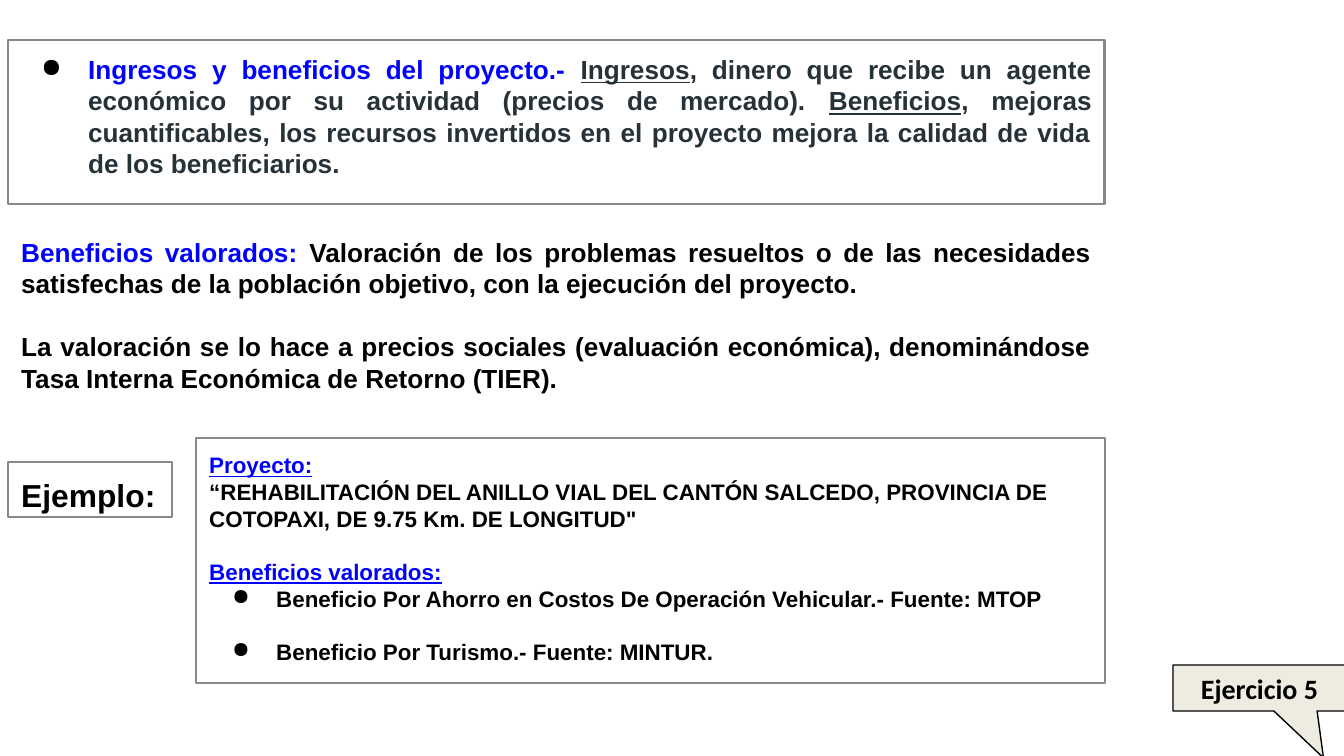
import pptx
import pptx.dml.color
import pptx.enum.shapes
import pptx.enum.text
import pptx.oxml
import pptx.oxml.ns
import pptx.util

PX = 914400 / 134.4
BLUE, BLACK, SLATE, GREY, WHITE = "0000FF", "000000", "263238", "888888", "FFFFFF"
SHAPE = pptx.enum.shapes.MSO_SHAPE
ALIGN = pptx.enum.text.PP_ALIGN
ANCHOR = pptx.enum.text.MSO_ANCHOR


def px(n):
    return pptx.util.Emu(round(n * PX))


def rgb(value):
    return pptx.dml.color.RGBColor.from_string(value)


def add_run(p, text, size=14, color=BLACK, font="Arial", underline=False):
    r = p.add_run()
    r.text = text
    r.font.size = pptx.util.Pt(size)
    r.font.name = font
    r.font.bold = True
    r.font.underline = underline
    r.font.color.rgb = rgb(color)


class SlideBuilder:
    """Holds the presentation style and the slide being drawn."""

    def __init__(self, width, height):
        self.prs = pptx.Presentation()
        self.prs.slide_width, self.prs.slide_height = px(width), px(height)
        self.s = self.prs.slides.add_slide(self.prs.slide_layouts[6])

    def box(self, x, y, w, h, fill=WHITE, line=GREY, weight=0.75,
            shape=SHAPE.RECTANGLE, anchor=ANCHOR.TOP):
        sp = self.s.shapes.add_shape(shape, px(x), px(y), px(w), px(h))
        sp.shadow.inherit = False
        sp.fill.solid()
        sp.fill.fore_color.rgb = rgb(fill)
        sp.line.color.rgb = rgb(line)
        sp.line.width = pptx.util.Pt(weight)
        tf = sp.text_frame
        tf.word_wrap = True
        tf.vertical_anchor = anchor
        tf.margin_left = tf.margin_right = tf.margin_top = tf.margin_bottom = pptx.util.Inches(0.1)
        return sp

    def paragraph(self, sp, *runs, align=ALIGN.LEFT, before=0, hang=0, **style):
        tf = sp.text_frame
        p = tf.add_paragraph() if tf.paragraphs[0].runs else tf.paragraphs[0]
        p.alignment = align
        if before:
            p.space_before = pptx.util.Pt(before)
        if hang:
            self.bullet(p, hang)
        for text, extra in runs:
            add_run(p, text, **{**style, **extra})

    def bullet(self, p, hang):
        ppr = p._p.get_or_add_pPr()
        ppr.set("marL", str(px(67)))
        ppr.set("indent", str(-px(hang)))
        ns = pptx.oxml.ns.nsdecls("a")
        for xml in (f'<a:buClr {ns}><a:srgbClr val="{BLACK}"/></a:buClr>',
                    f'<a:buChar {ns} char="●"/>'):
            ppr.append(pptx.oxml.parse_xml(xml))


def main():
    b = SlideBuilder(1344, 756)
    heading = {"color": BLUE, "underline": True}
    term = {"underline": True}

    definition = b.box(8, 40, 1097, 164, weight=1.5)
    b.paragraph(
        definition,
        ("Ingresos y beneficios del proyecto.- ", {"color": BLUE}),
        ("Ingresos", term),
        (", dinero que recibe un agente económico por su actividad (precios de mercado). ", {}),
        ("Beneficios", term),
        (", mejoras cuantificables, los recursos invertidos en el proyecto mejora "
         "la calidad de vida de los beneficiarios.", {}),
        align=ALIGN.JUSTIFY, hang=47, color=SLATE)

    project = b.box(196, 438, 909, 245)
    b.paragraph(project, ("Proyecto:", heading), size=12)
    b.paragraph(project, ("“REHABILITACIÓN DEL ANILLO VIAL DEL CANTÓN SALCEDO, PROVINCIA DE "
                          "COTOPAXI, DE 9.75 Km. DE LONGITUD\"", {}), size=12)
    b.paragraph(project, ("Beneficios valorados:", heading), size=12, before=14)
    for text, before in (
            ("Beneficio Por Ahorro en Costos De Operación Vehicular.- Fuente: MTOP", 0),
            ("Beneficio Por Turismo.- Fuente: MINTUR.", 14)):
        b.paragraph(project, (text, {}), size=12, before=before, hang=44)

    example = b.box(8, 462, 164, 55)
    b.paragraph(example, ("Ejemplo:", {}), size=17)

    valuation = b.box(8, 223, 1097, 185, line=WHITE, weight=1.5)
    b.paragraph(
        valuation,
        ("Beneficios valorados: ", {"color": BLUE}),
        ("Valoración de los problemas resueltos o de las necesidades satisfechas "
         "de la población objetivo, con la ejecución del proyecto.", {}),
        align=ALIGN.JUSTIFY)
    b.paragraph(
        valuation,
        ("La valoración se lo hace a precios sociales (evaluación económica), "
         "denominándose Tasa Interna Económica de Retorno (TIER).", {}),
        align=ALIGN.JUSTIFY, before=17)

    callout = b.box(1173, 665, 173, 46, fill="EEECE1", line=BLACK,
                    shape=SHAPE.RECTANGULAR_CALLOUT, anchor=ANCHOR.MIDDLE)
    callout.adjustments[0], callout.adjustments[1] = 0.37, 1.52
    b.paragraph(callout, ("Ejercicio 5", {}), align=ALIGN.CENTER, size=15, font="Calibri")

    b.prs.save("out.pptx")


if __name__ == "__main__":
    main()
